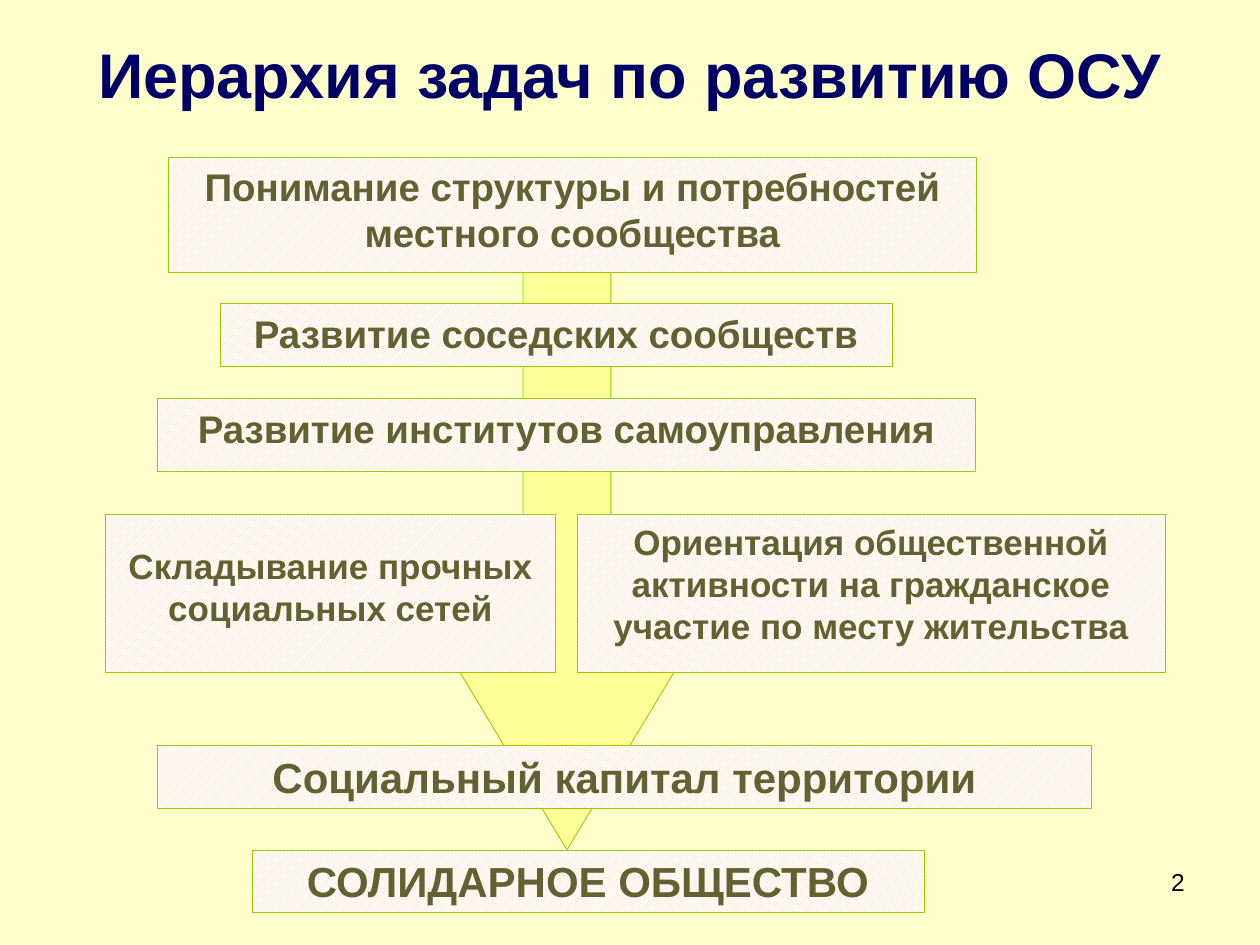
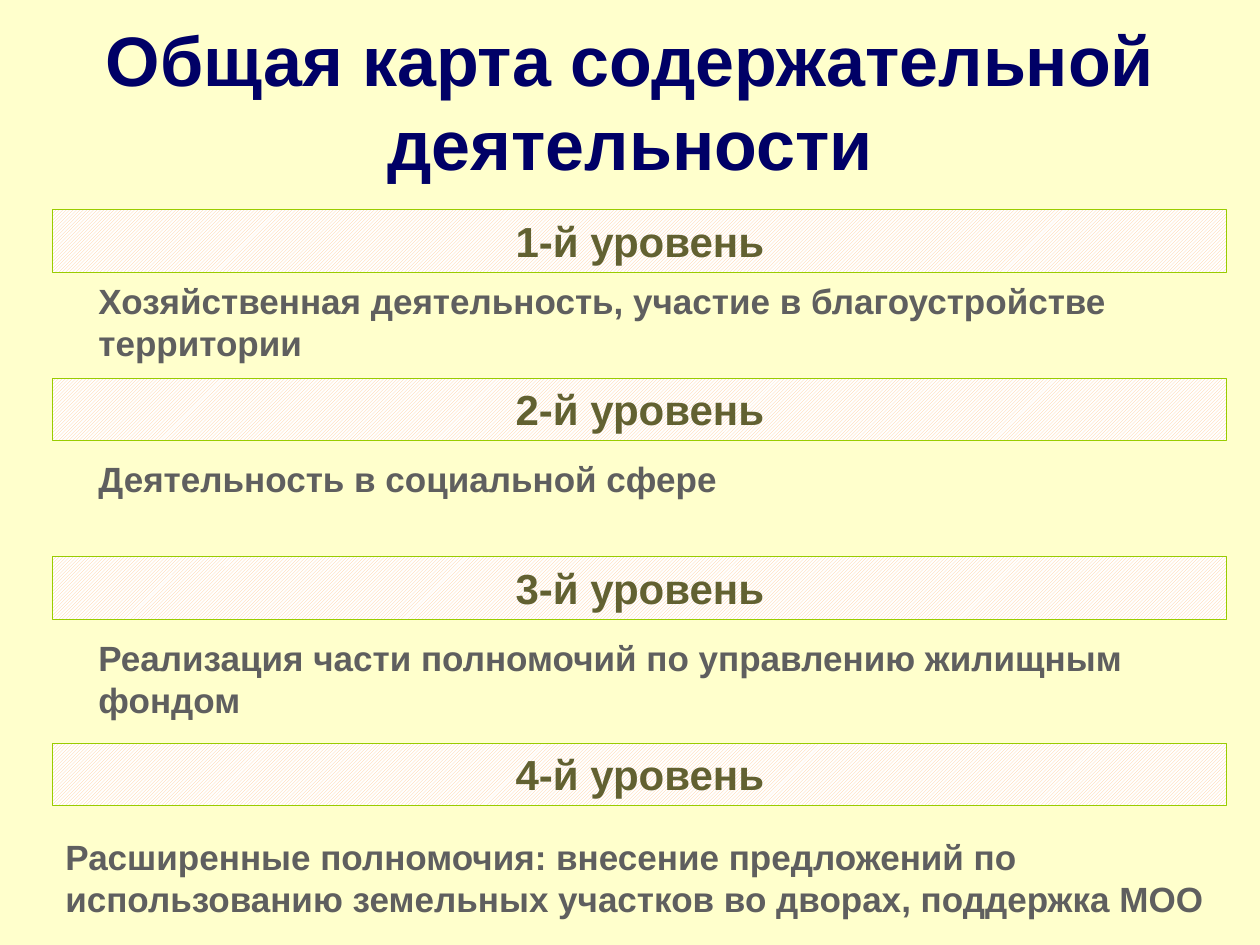
"""Build two slides on the tasks and levels of local self-government."""
from dataclasses import dataclass

from pptx import Presentation
from pptx.dml.color import RGBColor
from pptx.enum.dml import MSO_PATTERN
from pptx.enum.shapes import MSO_SHAPE
from pptx.enum.text import MSO_ANCHOR, PP_ALIGN
from pptx.shapes.autoshape import Shape
from pptx.slide import Slide
from pptx.util import Emu, Pt

RECT, ARROW = MSO_SHAPE.RECTANGLE, MSO_SHAPE.DOWN_ARROW
HATCH = MSO_PATTERN.LIGHT_UPWARD_DIAGONAL
TOP, MIDDLE = MSO_ANCHOR.TOP, MSO_ANCHOR.MIDDLE
LEFT, CENTER, RIGHT = PP_ALIGN.LEFT, PP_ALIGN.CENTER, PP_ALIGN.RIGHT

SCALE = 914400 / 126
FONT = "Arial"
COLORS = {
    "page": "FFFFCC", "title": "000066", "arrow": "FFFF99", "edge": "99CC00",
    "hatch": "FFCC99", "paper": "FFFFFF", "task": "626131", "note": "5F5F5F",
    "number": "000000",
}


@dataclass(frozen=True)
class Area:
    """A rectangle in px."""
    left: int
    top: int
    width: int
    height: int

    def emu(self) -> tuple[Emu, ...]:
        """Return the rectangle in EMU."""
        return tuple(px(n) for n in (self.left, self.top, self.width, self.height))


@dataclass(frozen=True)
class Task:
    """A hatched box with its text, size in points and top inset in px."""
    text: str
    area: Area
    size: int = 24
    inset: int = 6


@dataclass(frozen=True)
class Level:
    """A numbered bar and the note below it."""
    top: int
    note: str
    area: Area


TASKS = (
    Task("Понимание структуры и потребностей местного сообщества",
         Area(168, 157, 809, 116), 22),
    Task("Развитие соседских сообществ", Area(220, 304, 672, 63), 22),
    Task("Развитие институтов самоуправления", Area(157, 399, 819, 73), 22),
    Task("Складывание прочных социальных сетей",
         Area(105, 514, 451, 158), 20, 30),
    Task("Ориентация общественной активности на гражданское участие "
         "по месту жительства", Area(577, 514, 588, 158), 20),
    Task("Социальный капитал территории", Area(157, 746, 935, 63)),
    Task("СОЛИДАРНОЕ ОБЩЕСТВО", Area(252, 850, 672, 63)),
)
LEVELS = (
    Level(210, "Хозяйственная деятельность, участие в благоустройстве территории",
          Area(86, 273, 1038, 97)),
    Level(378, "Деятельность в социальной сфере", Area(86, 451, 788, 55)),
    Level(557, "Реализация части полномочий по управлению жилищным фондом",
          Area(86, 630, 1142, 97)),
    Level(743, "Расширенные полномочия: внесение предложений по использованию "
          "земельных участков во дворах, поддержка МОО",
          Area(53, 829, 1174, 97)),
)


def px(count: int) -> Emu:
    """Turn px into EMU."""
    return Emu(round(count * SCALE))


def color(name: str) -> RGBColor:
    """Look up a colour by name."""
    return RGBColor.from_string(COLORS[name])


def write(shape: Shape, text: str, size: int, tint: str, align: PP_ALIGN,
          anchor: MSO_ANCHOR = TOP, bold: bool = True) -> None:
    """Put one wrapped paragraph into a shape."""
    frame = shape.text_frame
    frame.word_wrap = True
    frame.vertical_anchor = anchor
    line = frame.paragraphs[0]
    line.text = text
    line.alignment = align
    line.font.name = FONT
    line.font.size = Pt(size)
    line.font.bold = bold
    line.font.color.rgb = color(tint)


def add_label(slide: Slide, area: Area, text: str, size: int, tint: str,
              align: PP_ALIGN = LEFT, anchor: MSO_ANCHOR = TOP,
              bold: bool = True) -> None:
    """Add a plain text box."""
    box = slide.shapes.add_textbox(*area.emu())
    write(box, text, size, tint, align, anchor, bold)


def add_form(slide: Slide, kind: MSO_SHAPE, area: Area) -> Shape:
    """Add a shape with the thin green edge."""
    form = slide.shapes.add_shape(kind, *area.emu())
    form.shadow.inherit = False
    form.line.color.rgb = color("edge")
    form.line.width = Pt(0.5)
    return form


def add_task(slide: Slide, task: Task) -> None:
    """Add a hatched box with centred text."""
    box = add_form(slide, RECT, task.area)
    box.fill.patterned()
    box.fill.pattern = HATCH
    box.fill.fore_color.rgb = color("hatch")
    box.fill.back_color.rgb = color("paper")
    box.text_frame.margin_top = px(task.inset)
    write(box, task.text, task.size, "task", CENTER)


def add_arrow(slide: Slide) -> None:
    """Add the tall arrow that runs behind the tasks."""
    arrow = add_form(slide, ARROW, Area(410, 168, 314, 682))
    arrow.adjustments[0] = 0.28
    arrow.adjustments[1] = 0.83
    arrow.fill.solid()
    arrow.fill.fore_color.rgb = color("arrow")


def add_page(deck: Presentation, title: str, area: Area, size: int) -> Slide:
    """Add a blank slide with its ground and title."""
    slide = deck.slides.add_slide(deck.slide_layouts[6])
    slide.background.fill.solid()
    slide.background.fill.fore_color.rgb = color("page")
    add_label(slide, area, title, size, "title", CENTER, MIDDLE)
    return slide


def add_tasks(deck: Presentation) -> None:
    """Build the slide with the order of tasks."""
    slide = add_page(deck, "Иерархия задач по развитию ОСУ",
                     Area(63, 42, 1134, 63), 36)
    add_arrow(slide)
    for task in TASKS:
        add_task(slide, task)
    add_label(slide, Area(903, 861, 294, 66), "2", 14, "number", RIGHT, bold=False)


def add_levels(deck: Presentation) -> None:
    """Build the slide with the levels of work."""
    slide = add_page(deck, "Общая карта содержательной деятельности",
                     Area(0, 21, 1260, 158), 40)
    for rank, level in enumerate(LEVELS, 1):
        add_task(slide, Task(f"{rank}-й уровень", Area(53, level.top, 1174, 63)))
        add_label(slide, level.area, level.note, 20, "note")


def main() -> None:
    """Build and save the deck."""
    deck = Presentation()
    deck.slide_width, deck.slide_height = px(1260), px(945)
    add_tasks(deck)
    add_levels(deck)
    deck.save("out.pptx")


if __name__ == "__main__":
    main()
